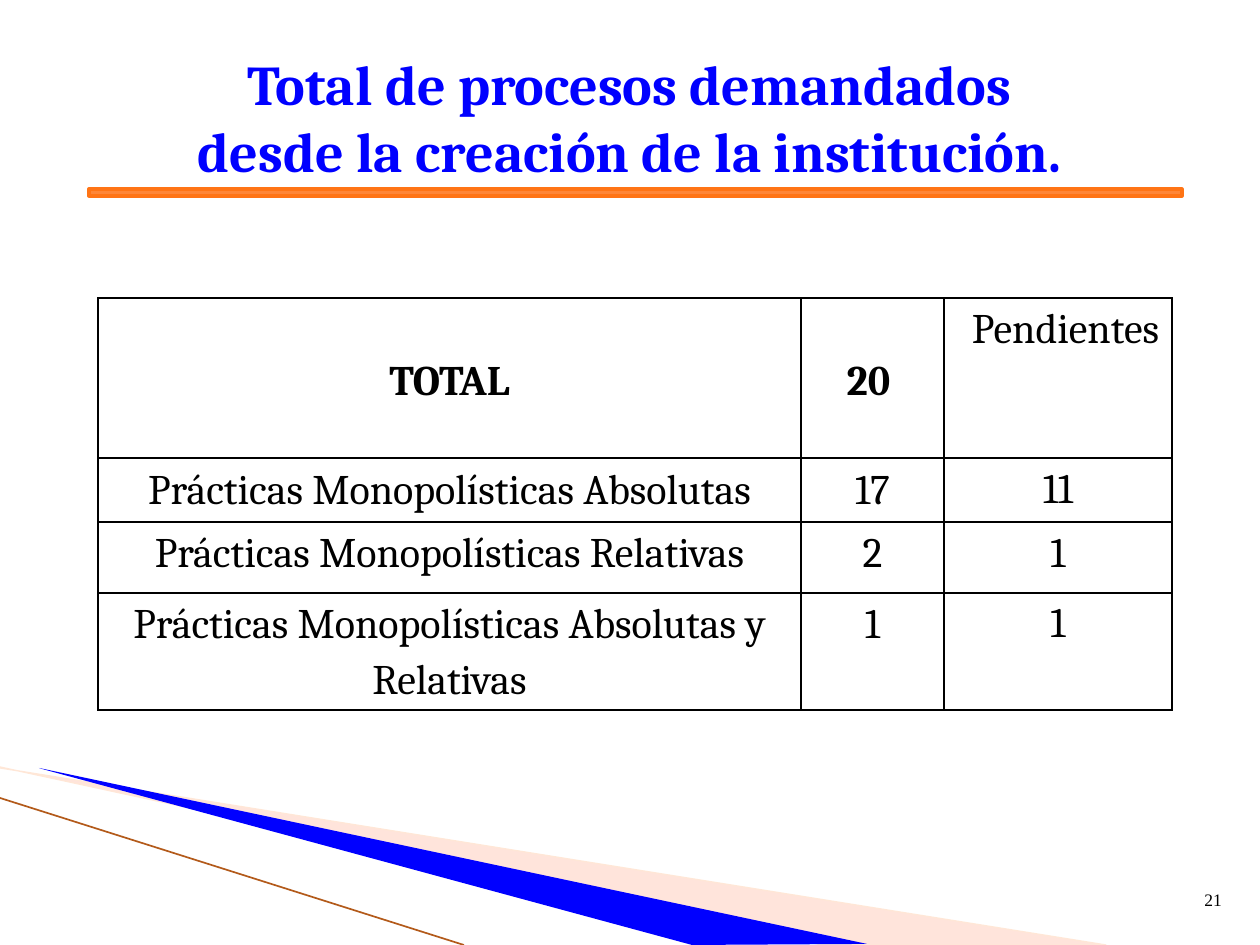
from lxml.etree import SubElement
from pptx import Presentation
from pptx.dml.color import RGBColor
from pptx.enum.shapes import MSO_CONNECTOR as Connector, MSO_SHAPE as Shape
from pptx.enum.text import MSO_ANCHOR as Anchor, PP_ALIGN as Align
from pptx.oxml.ns import qn
from pptx.util import Pt

EMU_PER_PX = 914400 / 126
COLORS = {
    "blue": "0000FF",
    "black": "000000",
    "peach": "FFBCA5",
    "peach_edge": "FFE7D7",
    "brown": "B35A1A",
    "orange": "FE8637",
    "orange_edge": "FF7415",
}
TITLE = ["Total de procesos demandados", "desde la creación de la institución."]
ROWS = [
    ["TOTAL", "20", "Pendientes"],
    ["Prácticas Monopolísticas Absolutas", "17", "11"],
    ["Prácticas Monopolísticas Relativas", "2", "1"],
    ["Prácticas Monopolísticas Absolutas y Relativas", "1", "1"],
]
COL_WIDTHS = [703, 143, 228]
ROW_HEIGHTS = [160, 64, 71, 112]


def px(*values):
    return [round(v * EMU_PER_PX) for v in values]


def color(name):
    return RGBColor.from_string(COLORS[name])


def add_run(p, text, size, font="Cambria", ink="black", bold=False):
    r = p.add_run()
    r.text = text
    r.font.size = Pt(size)
    r.font.name = font
    r.font.bold = bold
    r.font.color.rgb = color(ink)


def paint(s, fill, line=None, width=1):
    s.shadow.inherit = False
    s.fill.solid()
    s.fill.fore_color.rgb = color(fill)
    if line:
        s.line.color.rgb = color(line)
        s.line.width = Pt(width)
    else:
        s.line.fill.background()


def add_wedge(slide, points, fill, line=None, width=1, alpha=None):
    builder = slide.shapes.build_freeform(*points[0], scale=EMU_PER_PX)
    builder.add_line_segments(points[1:], close=True)
    s = builder.convert_to_shape()
    paint(s, fill, line, width)
    if alpha:
        clr = s.fill._xPr.find(qn("a:solidFill"))[0]
        SubElement(clr, qn("a:alpha"), val=str(alpha * 1000))


def add_line(slide, start, end, ink, width):
    s = slide.shapes.add_connector(Connector.STRAIGHT, *px(*start, *end))
    s.line.color.rgb = color(ink)
    s.line.width = Pt(width)
    SubElement(s._element.spPr, qn("a:effectLst"))


def add_bar(slide, box):
    s = slide.shapes.add_shape(Shape.MATH_MINUS, *px(*box))
    paint(s, "orange", "orange_edge", 2)


def add_title(slide, box):
    s = slide.shapes.title
    s.left, s.top, s.width, s.height = px(*box)
    tf = s.text_frame
    tf.vertical_anchor = Anchor.MIDDLE
    p = tf.paragraphs[0]
    p.alignment = Align.CENTER
    for i, text in enumerate(TITLE):
        if i:
            p.add_line_break()
        add_run(p, text, 32, ink="blue", bold=True)


def add_number(slide, box):
    tf = slide.shapes.add_textbox(*px(*box)).text_frame
    tf.word_wrap = True
    add_run(tf.paragraphs[0], "21", 10, "Times New Roman")


def add_borders(cell):
    tcPr = cell._tc.get_or_add_tcPr()
    for i, side in enumerate(("lnL", "lnR", "lnT", "lnB")):
        ln = tcPr.makeelement(qn(f"a:{side}"), {"w": str(Pt(1))})
        fill = SubElement(ln, qn("a:solidFill"))
        SubElement(fill, qn("a:srgbClr"), val=COLORS["black"])
        tcPr.insert(i, ln)


def set_margins(cell, left, top, right, bottom):
    cell.margin_left, cell.margin_top, cell.margin_right, cell.margin_bottom = px(
        left, top, right, bottom
    )


def fill_cell(cell, text, row, col):
    total = row == 0 and col < 2
    pending = row == 0 and col == 2
    set_margins(cell, *((8, 1, 8, 0) if col < 2 else (0, 0, 0, 0)))
    if pending:
        set_margins(cell, 28, 0, 0, 0)
    elif total and col == 1:
        set_margins(cell, 8, 1, 16, 0)
    cell.vertical_anchor = Anchor.MIDDLE if total else Anchor.TOP
    cell.fill.background()
    add_borders(cell)
    p = cell.text_frame.paragraphs[0]
    p.alignment = Align.LEFT if pending else Align.CENTER
    p.line_spacing = 1.15
    add_run(p, text, 24, bold=total)


def add_process_table(slide, left, top):
    box = px(left, top, sum(COL_WIDTHS), sum(ROW_HEIGHTS))
    table = slide.shapes.add_table(len(ROWS), len(COL_WIDTHS), *box).table
    table.first_row = table.horz_banding = False
    for column, width in zip(table.columns, px(*COL_WIDTHS)):
        column.width = width
    for row, height in zip(table.rows, px(*ROW_HEIGHTS)):
        row.height = height
    for i, texts in enumerate(ROWS):
        for j, text in enumerate(texts):
            fill_cell(table.cell(i, j), text, i, j)


def main():
    prs = Presentation()
    prs.slide_width, prs.slide_height = px(1260, 945)
    slide = prs.slides.add_slide(prs.slide_layouts[5])
    add_wedge(slide, [(0, 768), (1106, 945), (822, 945), (0, 767)],
              "peach", "peach_edge", 0.75, alpha=40)
    add_wedge(slide, [(39, 768), (867, 944), (692, 945), (42, 769)], "blue")
    add_line(slide, (0, 798), (464, 945), "brown", 0.95)
    add_bar(slide, (-108, 178, 1487, 29))
    add_title(slide, (63, 38, 1134, 157))
    add_number(slide, (1192, 883, 50, 50))
    add_process_table(slide, 98, 298)
    prs.save("out.pptx")


if __name__ == "__main__":
    main()
